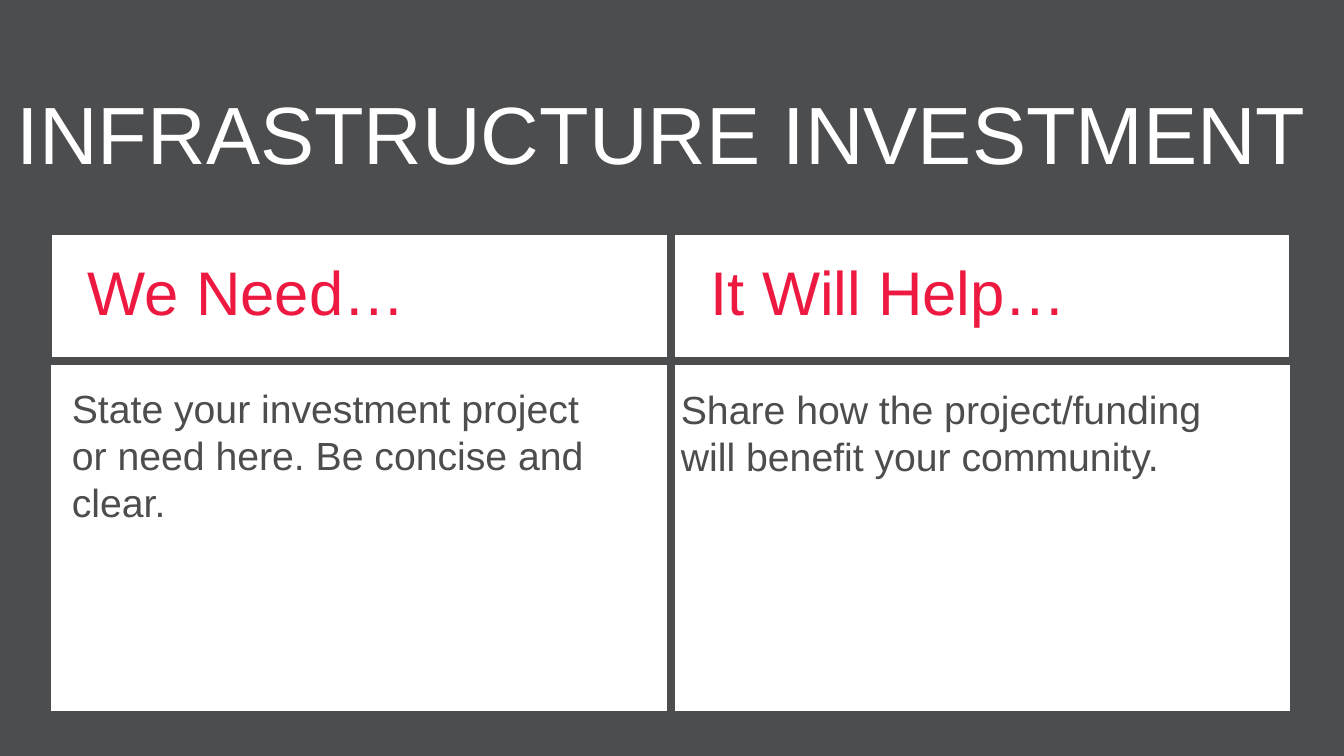
from dataclasses import dataclass

from lxml import etree
from pptx import Presentation
from pptx.dml.color import RGBColor
from pptx.enum.shapes import MSO_CONNECTOR, MSO_SHAPE
from pptx.enum.text import MSO_ANCHOR, PP_ALIGN
from pptx.oxml.ns import qn
from pptx.util import Emu, Pt

RECT = MSO_SHAPE.RECTANGLE
STRAIGHT = MSO_CONNECTOR.STRAIGHT
TOP, MIDDLE = MSO_ANCHOR.TOP, MSO_ANCHOR.MIDDLE
LEFT, CENTER = PP_ALIGN.LEFT, PP_ALIGN.CENTER
SCALE = 914400 / 100.8


@dataclass(frozen=True)
class Theme:
    font: str = "Arial"
    gray: RGBColor = RGBColor(0x4C, 0x4D, 0x4F)
    white: RGBColor = RGBColor(0xFF, 0xFF, 0xFF)
    red: RGBColor = RGBColor(0xED, 0x19, 0x41)
    title: int = 58
    heading: int = 44
    body: int = 28


THEME = Theme()


def px(n):
    return Emu(round(n * SCALE))


def set_line(sp, width):
    sp.line.color.rgb = THEME.gray
    sp.line.width = Pt(width)


def add_frame(s, x, y, w, h, width, fill=None):
    sp = s.shapes.add_shape(RECT, px(x), px(y), px(w), px(h))
    sp.shadow.inherit = False
    if fill is None:
        sp.fill.background()
    else:
        sp.fill.solid()
        sp.fill.fore_color.rgb = fill
    set_line(sp, width)


def add_divider(s, x, top, bottom, width):
    sp = s.shapes.add_connector(STRAIGHT, px(x), px(top), px(x), px(bottom))
    set_line(sp, width)
    etree.SubElement(sp._element.spPr, qn("a:effectLst"))


def add_text(s, x, y, w, h, text, size, color, align=LEFT, anchor=TOP):
    sp = s.shapes.add_textbox(px(x), px(y), px(w), px(h))
    tf = sp.text_frame
    tf.word_wrap = True
    tf.vertical_anchor = anchor
    tf.text = text
    p = tf.paragraphs[0]
    p.alignment = align
    r = p.runs[0]
    r.font.name = THEME.font
    r.font.size = Pt(size)
    r.font.color.rgb = color
    return p


def main():
    prs = Presentation()
    prs.slide_width, prs.slide_height = px(1344), px(756)
    s = prs.slides.add_slide(prs.slide_layouts[6])
    s.background.fill.solid()
    s.background.fill.fore_color.rgb = THEME.gray

    # White card and title
    x, y, w, h = 48, 231, 1245, 483
    add_frame(s, x, y, w, h, 4.5, THEME.white)
    p = add_text(s, 0, 65, 1344, 146, "INFRASTRUCTURE INVESTMENT ",
                 THEME.title, THEME.white, CENTER, MIDDLE)
    p.line_spacing = 0.9

    # Column headings
    for left, width, text in ((78, 380, "We Need…"), (701, 429, "It Will Help…")):
        add_text(s, left, 249, width, 85, text, THEME.heading, THEME.red)

    # Header band and column divider
    add_frame(s, x, y, w, 130, 6)
    add_divider(s, 671, y, y + h, 6)

    # Column texts
    for left, top, height, text in (
        (62, 379, 152, "State your investment project or need here. "
                       "Be concise and clear."),
        (671, 380, 105, "Share how the project/funding will benefit "
                        "your community."),
    ):
        add_text(s, left, top, 563, height, text, THEME.body, THEME.gray)

    prs.save("out.pptx")


if __name__ == "__main__":
    main()
